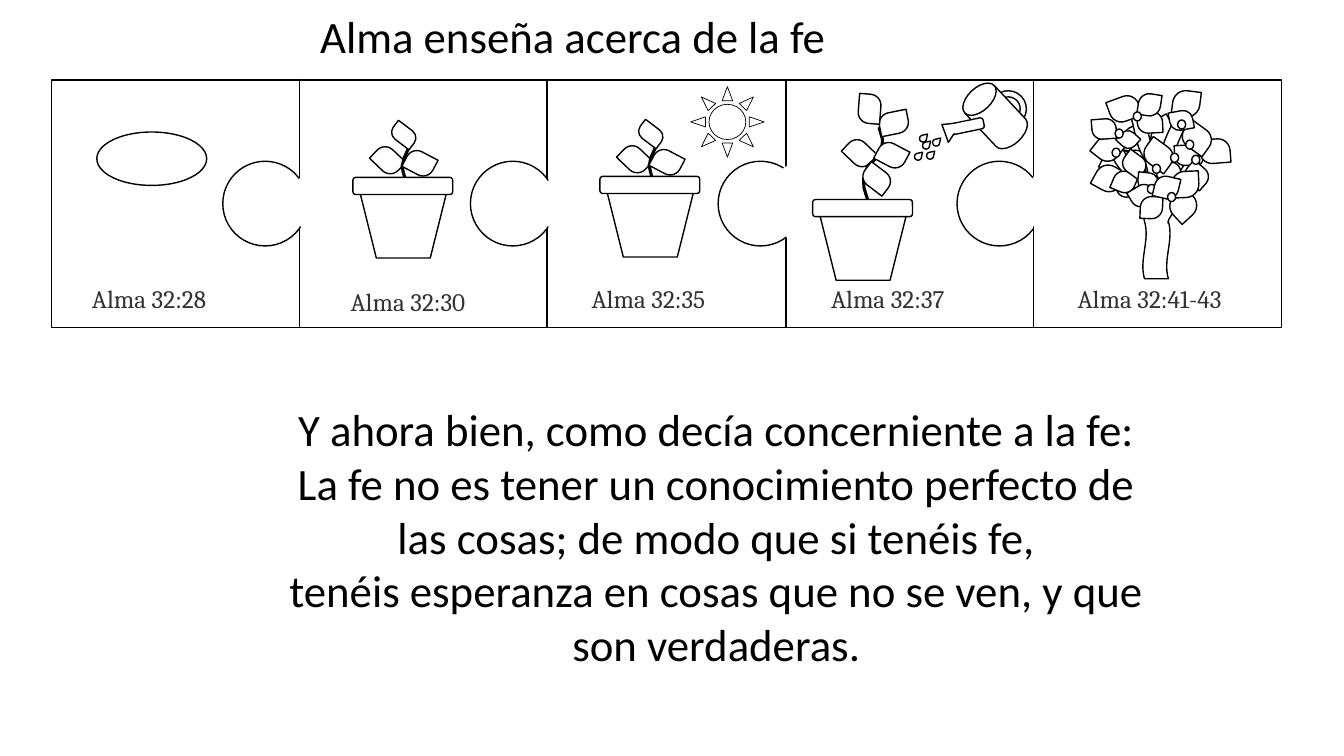
from pptx import Presentation
from pptx.dml.color import RGBColor
from pptx.enum.shapes import MSO_SHAPE
from pptx.enum.text import MSO_ANCHOR, MSO_AUTO_SIZE, PP_ALIGN
from pptx.util import Inches, Pt

COLORS = {"paper": "FFFFFF", "ink": "000000", "caption": "333333"}

# Grid: 1333 columns by 750 rows
WIDTH, HEIGHT = Inches(13.33), Inches(7.5)
COLUMNS, ROWS = 1333, 750

PANEL_COLUMNS = (51.4, 297, 542.7, 779.6, 1025)
PANEL_TOP, PANEL_SIZE, TAB_SIZE = 79.3, 246, 84
TAB_OFFSET = 169.6
SOCKETS = ((291, 158), (538, 160), (762, 158), (1018, 158))
CAPTIONS = (
    ("Alma 32:28", 81.4, 276),
    ("Alma 32:30", 338, 279),
    ("Alma 32:35", 577, 276),
    ("Alma 32:37", 814.5, 276),
    ("Alma 32:41-43", 1059, 276),
)
# A tilde stands for a space that must not break
VERSE = (
    "Y ahora bien, como decía concerniente a la~fe: La fe no es tener un "
    "conocimiento perfecto de las cosas; de modo que si tenéis fe, "
    "tenéis~esperanza~en cosas que~no~se ven, y que son verdaderas."
).replace("~", chr(160))

# Leaves: column, row, width, height, rotation; young plants count from the pot rim
SPROUT_LEAVES = ((20, -28, 29, 22, 43.7), (52, -25, 29, 22, 27.8), (42, -55, 17, 26, 307.3))
SPROUT_STEM = ((43, 11), (45, 8), (46, 3), (47, -7), (48, -13), (49, -14), (52, -19),
               (55, -22), (59, -26), (61, -28), (63, -32), (63, -40))
TALL_LEAVES = ((32, -57, 29, 22, 43.7), (64, -55, 29, 22, 27.8), (53, -35, 21, 29, 307.3),
               (66, -87, 29, 22, 348.6), (42, -101, 29, 22, 274.6))
TALL_STEM = ((39, 12), (43, 7), (45, 0), (46, -16), (49, -25), (51, -26), (57, -35),
             (65, -38), (71, -43), (77, -48), (80, -54), (81, -67))
STEM_TURN = 339.5

TREE_BACK_LEAVES = (
    (1158, 131, 24, 30, 85.5), (1138, 118, 27, 26, 329.9), (1114, 125, 27, 26, 10.4),
    (1115, 149, 22, 22, 15.3), (1094, 147, 27, 26, 26.4), (1086, 164, 27, 26, 28.9),
    (1109, 173, 20, 24, 71.7),
)
TREE_WOOD = ((1090, 206, 114, 27, 270), (1072, 160, 95, 15, 235.5), (1124, 176, 95, 15, 298.7),
             (1111, 145, 95, 15, 289.4), (1091, 143, 95, 15, 252.4))
TREE_FRONT_LEAVES = (
    (1086, 135, 25, 25, 38.2), (1163, 90, 27, 26, 187.3), (1103, 93, 24, 30, 69.8),
    (1110, 130, 18, 17, 42.2), (1085, 116, 20, 24, 85.5), (1130, 109, 21, 25, 87.1),
    (1104, 170, 22, 21, 22.8), (1115, 151, 20, 24, 126.4), (1149, 159, 20, 24, 87.1),
    (1137, 139, 24, 30, 126), (1129, 93, 22, 22, 8.9), (1167, 142, 20, 24, 87.1),
    (1193, 135, 24, 30, 85.5), (1175, 122, 24, 30, 126), (1162, 108, 19, 23, 79.4),
    (1177, 162, 20, 24, 130.9),
)
TREE_MIDDLE_LEAVES = ((1130, 170, 17, 20, 276.1), (1123, 182, 20, 24, 238.6))
TREE_LOW_LEAVES = (
    (1160, 191, 27, 26, 137.2), (1162, 170, 27, 26, 177.7), (1131, 195, 22, 22, 182.6),
    (1145, 175, 24, 22, 193.2),
)
FRUITS = ((1103, 147), (1182, 154), (1176, 139), (1106, 128), (1124, 111), (1168, 119),
          (1143, 163), (1161, 152))
DROPS = ((915, 141), (925, 138), (912, 134), (907, 152), (919, 151))


def col(n):
    return round(WIDTH * n / COLUMNS)


def row(n):
    return round(HEIGHT * n / ROWS)


def rgb(name):
    return RGBColor.from_string(COLORS[name])


def paint(shape, line, weight):
    shape.shadow.inherit = False
    shape.fill.solid()
    shape.fill.fore_color.rgb = rgb("paper")
    if line:
        shape.line.color.rgb = rgb(line)
        shape.line.width = Pt(weight)
    else:
        shape.line.fill.background()


def draw(shapes, preset, x, y, w, h, turn=0, adjust=(), line="ink", weight=1):
    shape = shapes.add_shape(preset, col(x), row(y), col(w), row(h))
    shape.rotation = turn
    for i, value in enumerate(adjust):
        shape.adjustments[i] = value
    paint(shape, line, weight)


def draw_leaves(shapes, leaves, x=0, y=0):
    for dx, dy, w, h, turn in leaves:
        draw(shapes, MSO_SHAPE.ROUND_2_DIAG_RECTANGLE, x + dx, y + dy, w, h, turn, (0.5, 0))


def draw_fruits(shapes, fruits):
    for x, y in fruits:
        draw(shapes, MSO_SHAPE.OVAL, x, y, 8, 9)


def write(frame, text, font, size, color, align=PP_ALIGN.LEFT):
    frame.word_wrap = True
    frame.auto_size = MSO_AUTO_SIZE.NONE
    frame.vertical_anchor = MSO_ANCHOR.TOP
    frame.text = text
    paragraph = frame.paragraphs[0]
    paragraph.alignment = align
    paragraph.space_before = Pt(0)
    paragraph.font.name = font
    paragraph.font.size = Pt(size)
    paragraph.font.color.rgb = rgb(color)
    return paragraph


def place(shape, x, y, w, h):
    shape.left, shape.top, shape.width, shape.height = col(x), row(y), col(w), row(h)


def draw_puzzle(shapes):
    # Each tab lies over its own panel, under the later ones
    for batch in (PANEL_COLUMNS[:3], PANEL_COLUMNS[3:4], PANEL_COLUMNS[4:]):
        for x in batch:
            draw(shapes, MSO_SHAPE.RECTANGLE, x, PANEL_TOP, PANEL_SIZE, PANEL_SIZE)
        for x in batch:
            if x != PANEL_COLUMNS[-1]:
                draw(shapes, MSO_SHAPE.OVAL, x + TAB_OFFSET, 160, TAB_SIZE, TAB_SIZE)
    for x, y in SOCKETS:
        draw(shapes, MSO_SHAPE.OVAL, x, y, TAB_SIZE, TAB_SIZE, line="paper")


def draw_plant(shapes, x, y, leaves, stem):
    draw_leaves(shapes, leaves[:1], x, y)
    points = [(col(x + dx), row(y + dy)) for dx, dy in stem]
    outline = shapes.build_freeform(*points[0])
    outline.add_line_segments(points[1:], close=False)
    stalk = outline.convert_to_shape()
    stalk.rotation = STEM_TURN
    paint(stalk, "ink", 2.25)
    draw_leaves(shapes, leaves[1:2], x, y)
    draw(shapes, MSO_SHAPE.TRAPEZOID, x + 4, y + 3, 92, 77, 180)
    draw(shapes, MSO_SHAPE.ROUNDED_RECTANGLE, x, y, 99, 17)
    draw_leaves(shapes, leaves[2:], x, y)


def draw_watering_can(shapes):
    draw(shapes, MSO_SHAPE.DONUT, 982, 90, 36, 36, 316.9, (0.169,))
    draw(shapes, MSO_SHAPE.FLOWCHART_MAGNETIC_DISK, 967, 81, 40, 68, 316.9)
    draw(shapes, MSO_SHAPE.ROUNDED_RECTANGLE, 952, 107, 11, 37, 258.2, (0.258,))
    draw(shapes, MSO_SHAPE.ISOSCELES_TRIANGLE, 929, 120, 23, 15, 302.6)
    draw(shapes, MSO_SHAPE.ROUNDED_RECTANGLE, 947, 117, 9, 19, 258.2, (0.258,), line=None)
    for x, y in DROPS:
        draw(shapes, MSO_SHAPE.TEAR, x, y, 7, 7, adjust=(1.286,))


def draw_tree(shapes):
    draw_leaves(shapes, TREE_BACK_LEAVES)
    for branch in TREE_WOOD:
        draw(shapes, MSO_SHAPE.DOUBLE_WAVE, *branch)
    draw(shapes, MSO_SHAPE.OVAL, 1139, 181, 19, 67, line=None)
    draw_leaves(shapes, TREE_FRONT_LEAVES)
    draw_fruits(shapes, FRUITS)
    draw_leaves(shapes, TREE_MIDDLE_LEAVES)
    draw_fruits(shapes, [(1138, 183)])
    draw_leaves(shapes, TREE_LOW_LEAVES)
    draw_fruits(shapes, [(1158, 191)])


def main():
    deck = Presentation()
    deck.slide_width, deck.slide_height = WIDTH, HEIGHT
    slide = deck.slides.add_slide(deck.slide_layouts[1])
    shapes = slide.shapes

    # Title and verse
    title, verse = slide.placeholders
    place(title, 307.5, 4, 646, 64)
    write(title.text_frame, "Alma enseña acerca de la fe", "Calibri", 32, "ink")
    place(verse, 263, 393.6, 895, 333)
    passage = write(verse.text_frame, VERSE, "Calibri", 32, "ink", PP_ALIGN.CENTER)
    properties = passage._p.get_or_add_pPr()
    properties.set("marL", "0")
    properties.set("indent", "0")
    bullet_off = properties.makeelement(
        "{http://schemas.openxmlformats.org/drawingml/2006/main}buNone", {})
    properties.insert_element_before(bullet_off, "a:tabLst", "a:defRPr", "a:extLst")

    # Puzzle strip, from seed to tree
    draw_puzzle(shapes.add_group_shape().shapes)
    draw(shapes, MSO_SHAPE.OVAL, 96, 131, 109, 53)
    draw_plant(shapes.add_group_shape().shapes, 350, 176, SPROUT_LEAVES, SPROUT_STEM)
    draw(shapes, MSO_SHAPE.SUN, 685, 86, 73, 70, weight=0.5)
    draw_watering_can(shapes.add_group_shape().shapes)
    draw_tree(shapes.add_group_shape().shapes)
    draw_plant(shapes.add_group_shape().shapes, 806, 198, TALL_LEAVES, TALL_STEM)
    draw_plant(shapes.add_group_shape().shapes, 595, 175, SPROUT_LEAVES, SPROUT_STEM)

    # Scripture references
    for text, x, y in CAPTIONS:
        caption = shapes.add_textbox(col(x), row(y), col(184), row(40))
        write(caption.text_frame, text, "Cambria", 18, "caption")

    deck.save("out.pptx")


if __name__ == "__main__":
    main()
